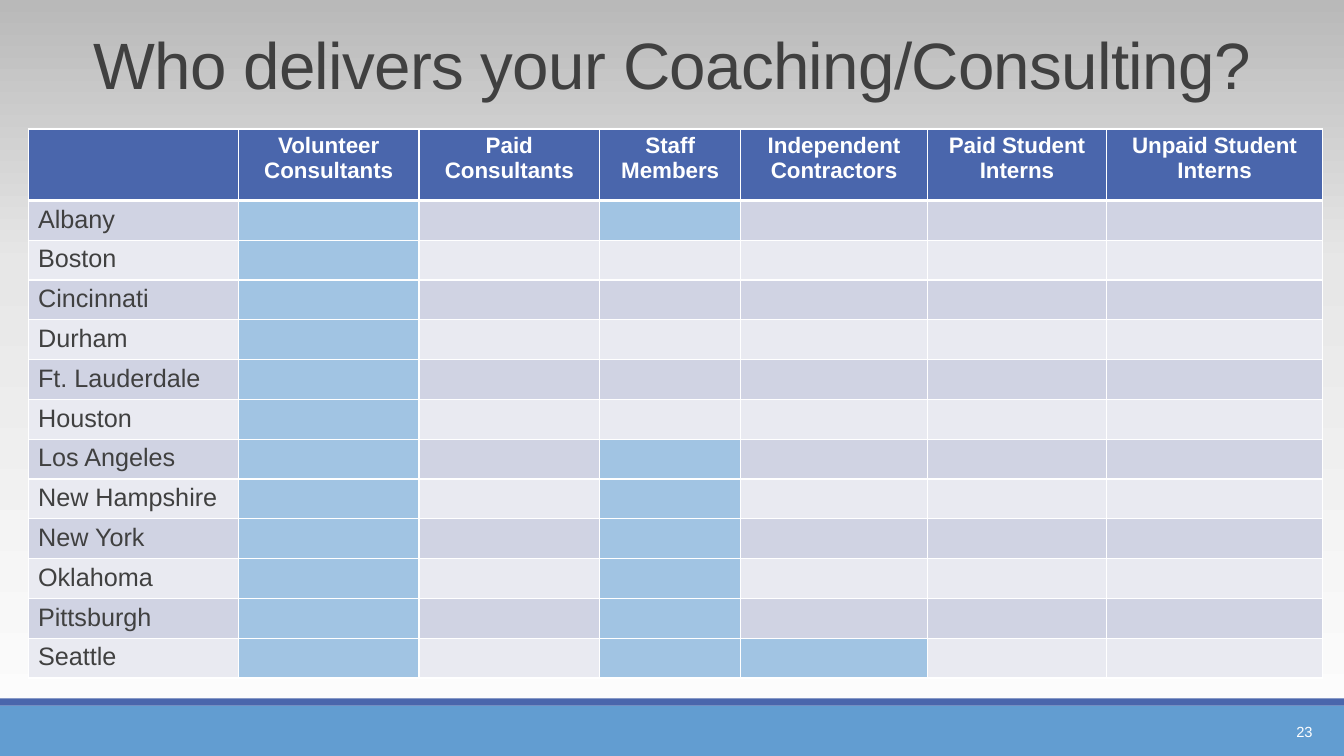
from copy import deepcopy

from lxml.etree import SubElement
from pptx import Presentation
from pptx.dml.color import RGBColor
from pptx.enum.shapes import MSO_SHAPE
from pptx.enum.text import MSO_ANCHOR, PP_ALIGN
from pptx.oxml.ns import qn
from pptx.util import Cm, Pt

PAGE_WIDTH, PAGE_HEIGHT = 33.87, 19.05
BLUE, SKY, MARK = "4A66AC", "629DD1", "A1C4E3"
BANDS = ["D0D3E3", "E9EAF1"]
WHITE, DARK = "FFFFFF", "404040"

HEADINGS = ["", "Volunteer Consultants", "Paid Consultants", "Staff Members",
            "Independent Contractors", "Paid Student Interns", "Unpaid Student Interns"]
COLUMN_WIDTHS = [5.3, 4.55, 4.55, 3.56, 4.7, 4.52, 5.44]
HEADER_HEIGHT, ROW_HEIGHT = 1.8, 0.97
VOLUNTEER, STAFF, CONTRACTOR = 1, 3, 4
CITY_MARKS = {
    "Albany": {VOLUNTEER, STAFF},
    "Boston": {VOLUNTEER},
    "Cincinnati": {VOLUNTEER},
    "Durham": {VOLUNTEER},
    "Ft. Lauderdale": {VOLUNTEER},
    "Houston": {VOLUNTEER},
    "Los Angeles": {VOLUNTEER, STAFF},
    "New Hampshire": {VOLUNTEER, STAFF},
    "New York": {VOLUNTEER, STAFF},
    "Oklahoma": {VOLUNTEER, STAFF},
    "Pittsburgh": {VOLUNTEER, STAFF},
    "Seattle": {VOLUNTEER, STAFF, CONTRACTOR},
}


def color(value):
    return RGBColor.from_string(value)


def style_paragraph(paragraph, size, shade, align, bold=False):
    paragraph.alignment = align
    font = paragraph.font
    font.name, font.size, font.bold = "Arial", Pt(size), bold
    font.color.rgb = color(shade)


def add_text(page, left, top, width, height, text, size, shade, align):
    box = page.shapes.add_textbox(Cm(left), Cm(top), Cm(width), Cm(height))
    frame = box.text_frame
    frame.word_wrap = True
    frame.vertical_anchor = MSO_ANCHOR.MIDDLE
    paragraph = frame.paragraphs[0]
    paragraph.text = text
    style_paragraph(paragraph, size, shade, align)
    return paragraph


def paint_background(page):
    fill = page.background.fill
    fill.gradient()
    fill.gradient_angle = 90
    stop_list = page.element.find(".//" + qn("a:gsLst"))
    stop_list.append(deepcopy(stop_list[-1]))
    for stop, (position, shade) in zip(
            fill.gradient_stops, [(0, "FEFEFE"), (0.65, "E7E7E7"), (1, "B9B9B9")]):
        stop.position = position
        stop.color.rgb = color(shade)


def add_title(page, left, top, width, height):
    paragraph = add_text(page, left, top, width, height,
                         "Who delivers your Coaching/Consulting?", 46.8, DARK, PP_ALIGN.CENTER)
    paragraph.line_spacing = 0.85
    paragraph.runs[0].font._element.set("spc", "-50")


def add_footer(page, left, top, width, height):
    stripe = 0.18
    for bar_top, bar_height, shade in [(top + stripe, height - stripe, SKY), (top, stripe, BLUE)]:
        bar = page.shapes.add_shape(MSO_SHAPE.RECTANGLE, Cm(left), Cm(bar_top),
                                    Cm(width), Cm(bar_height))
        bar.shadow.inherit = False
        bar.fill.solid()
        bar.fill.fore_color.rgb = color(shade)
        bar.line.fill.background()
    add_text(page, left + width - 4.17, top + 0.33, 3.63, 1.02, "23", 10.5, WHITE, PP_ALIGN.RIGHT)


def add_borders(cell, top, bottom):
    properties = cell._tc.get_or_add_tcPr()
    for side, weight in [("L", 1), ("R", 1), ("T", top), ("B", bottom)]:
        line = SubElement(properties, qn("a:ln" + side), w=str(Pt(weight)))
        SubElement(SubElement(line, qn("a:solidFill")), qn("a:srgbClr"), val=WHITE)


def fill_cell(cell, text, shade, size, text_shade, align, bold, top, bottom):
    cell.margin_left = cell.margin_right = Cm(0.25)
    cell.margin_top = cell.margin_bottom = Cm(0.12)
    add_borders(cell, top, bottom)
    cell.fill.solid()
    cell.fill.fore_color.rgb = color(shade)
    paragraph = cell.text_frame.paragraphs[0]
    if text:
        paragraph.text = text
    style_paragraph(paragraph, size, text_shade, align, bold)


def add_city_table(page, left, top):
    height = HEADER_HEIGHT + ROW_HEIGHT * len(CITY_MARKS)
    table = page.shapes.add_table(len(CITY_MARKS) + 1, len(HEADINGS), Cm(left), Cm(top),
                                  Cm(sum(COLUMN_WIDTHS)), Cm(height)).table
    for column, width in zip(table.columns, COLUMN_WIDTHS):
        column.width = Cm(width)
    for row in table.rows:
        row.height = Cm(ROW_HEIGHT)
    table.rows[0].height = Cm(HEADER_HEIGHT)
    for index, heading in enumerate(HEADINGS):
        fill_cell(table.cell(0, index), heading, BLUE, 16, WHITE, PP_ALIGN.CENTER, True, 1, 3)
    for number, (city, marks) in enumerate(CITY_MARKS.items()):
        for index in range(len(HEADINGS)):
            shade = MARK if index in marks else BANDS[number % 2]
            fill_cell(table.cell(number + 1, index), "" if index else city, shade, 18, DARK,
                      PP_ALIGN.LEFT, False, 1 if number else 3, 1)


def main():
    deck = Presentation()
    deck.slide_width, deck.slide_height = Cm(PAGE_WIDTH), Cm(PAGE_HEIGHT)
    page = deck.slides.add_slide(deck.slide_layouts[6])
    paint_background(page)
    add_footer(page, 0, 17.6, PAGE_WIDTH, PAGE_HEIGHT - 17.6)
    add_title(page, 0, 0.25, PAGE_WIDTH, 3)
    add_city_table(page, 0.71, 3.25)
    deck.save("out.pptx")


if __name__ == "__main__":
    main()
